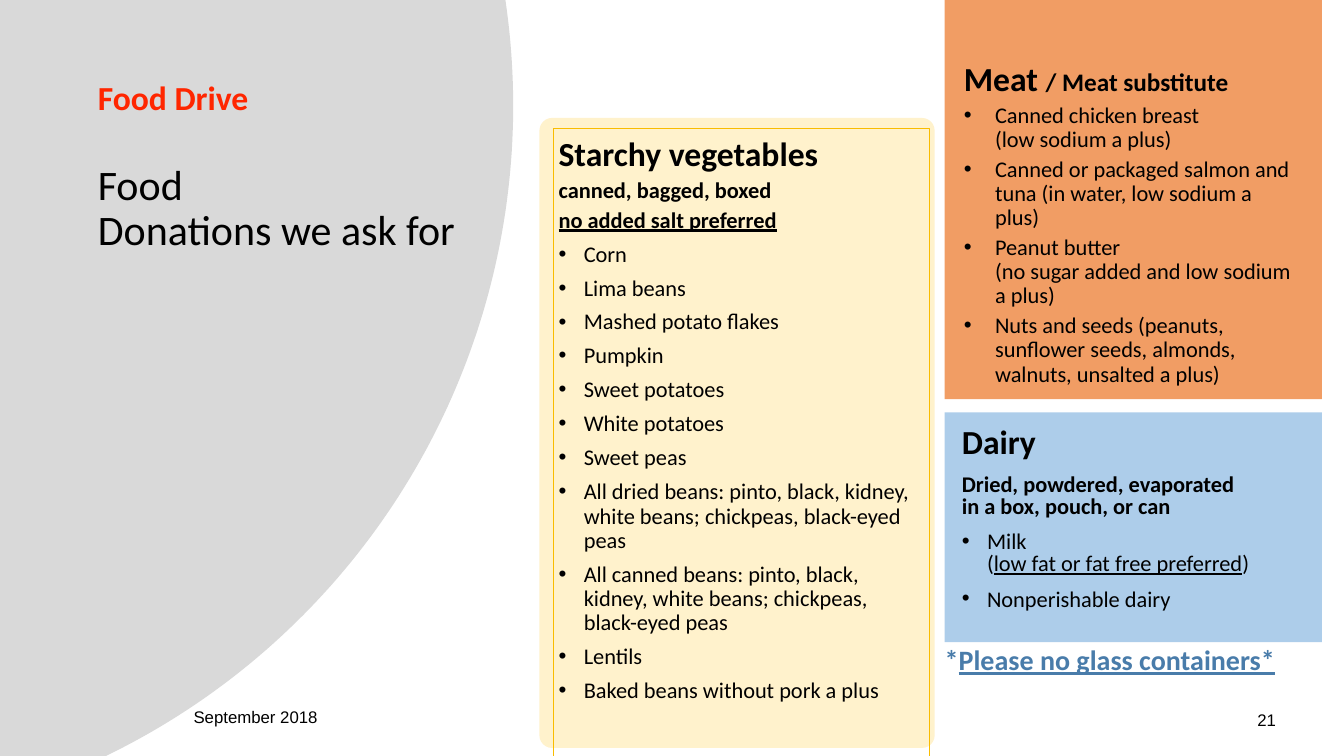
from dataclasses import dataclass
from math import asin, cos, sin

from lxml import etree
from pptx import Presentation
from pptx.dml.color import RGBColor
from pptx.enum.shapes import MSO_SHAPE
from pptx.enum.text import MSO_ANCHOR, MSO_AUTO_SIZE, PP_ALIGN
from pptx.oxml.ns import qn
from pptx.util import Inches, Pt

RECT, ROUNDED = MSO_SHAPE.RECTANGLE, MSO_SHAPE.ROUNDED_RECTANGLE
TOP, MIDDLE = MSO_ANCHOR.TOP, MSO_ANCHOR.MIDDLE
LEFT = PP_ALIGN.LEFT
NO_FIT, GROW = MSO_AUTO_SIZE.NONE, MSO_AUTO_SIZE.SHAPE_TO_FIT_TEXT

COLORS = {
    "black": "000000", "red": "FF2600", "blue": "497CAA", "gray": "D9D9D9",
    "cream": "FFF2CC", "sky": "ADCDEA", "orange": "F19D64", "gold": "F9BC00",
}
WIDTH, HEIGHT = 13.33, 7.5


@dataclass
class Run:
    text: str
    size: float = 16
    bold: bool = False
    underline: bool = False
    color: str = "black"
    font: str = "Calibri"


@dataclass
class Para:
    runs: list[Run]
    before: float = 0
    line: float = 0.9
    indent: float = 0


@dataclass
class Panel:
    box: tuple[float, float, float, float]
    color: str
    shape: MSO_SHAPE = RECT


PANELS = [
    Panel((5.35, 1.17, 3.92, 6.25), "cream", ROUNDED),
    Panel((9.37, 4.09, 3.74, 2.28), "sky"),
    Panel((9.37, -0.1, 3.74, 4.06), "orange"),
]


def bullets(items: list[str], before: float, indent: float) -> list[Para]:
    return [Para([Run(item)], before, indent=indent) for item in items]


TITLE = [
    Para([Run("Food Drive", 24, True, color="red")]),
    Para([Run("Food\nDonations we ask for", 30)], before=33),
]
STARCHY = [
    Para([Run("Starchy vegetables", 24, True)], 10, 1),
    Para([Run("canned, bagged, boxed", bold=True)], 4),
    Para([Run("no added salt preferred", bold=True, underline=True)], 4),
    *bullets([
        "Corn", "Lima beans", "Mashed potato flakes", "Pumpkin",
        "Sweet potatoes", "White potatoes", "Sweet peas",
        "All dried beans: pinto, black, kidney, white beans; chickpeas, black-eyed peas",
        "All canned beans: pinto, black, kidney, white beans; chickpeas, black-eyed peas",
        "Lentils", "Baked beans without pork a plus",
    ], 7, 0.25),
]
MEAT = [
    Para([Run("Meat ", 24, True), Run("/ Meat substitute", 18, True)], 10, 1.2),
    *bullets([
        "Canned chicken breast \n(low sodium a plus)",
        "Canned or packaged salmon and tuna (in water, low sodium a plus)",
        "Peanut butter \n(no sugar added and low sodium a plus)",
        "Nuts and seeds (peanuts, sunflower seeds, almonds, walnuts, unsalted a plus)",
    ], 4, 0.31),
]
DAIRY = [
    Para([Run("Dairy", 24, True)], 10, 0.81),
    Para([Run("Dried, powdered, evaporated \nin a box, pouch, or can", bold=True)], 10, 0.81),
    Para([Run("Milk \n("), Run("low fat or fat free preferred", underline=True), Run(")")],
         10, 0.81, 0.25),
    Para([Run("Nonperishable dairy")], 10, 0.81, 0.25),
]
GLASS = [Para([
    Run("*", 20, True, color="blue"),
    Run("Please no glass containers*", 20, True, True, "blue"),
], 10, 0.81)]
DATE = [Para([Run("September 2018", 12, font="Arial")], line=1)]
NUMBER = [Para([Run("21", 12, font="Arial")], line=1)]


def rgb(name: str) -> RGBColor:
    return RGBColor.from_string(COLORS[name])


def paint(sp, color: str) -> None:
    sp.shadow.inherit = False
    sp.fill.solid()
    sp.fill.fore_color.rgb = rgb(color)
    sp.line.fill.background()


def add_text(p, text: str, *, size: float, bold: bool, underline: bool,
             color: str, font: str) -> None:
    for i, part in enumerate(text.split("\n")):
        if i:
            p.add_line_break()
        if part:
            r = p.add_run()
            r.text = part
            r.font.size = Pt(size)
            r.font.bold = bold
            r.font.underline = underline
            r.font.name = font
            r.font.color.rgb = rgb(color)


def set_bullet(p, indent: float) -> None:
    pPr = p._p.get_or_add_pPr()
    pPr.set("marL", str(Inches(indent)))
    pPr.set("indent", str(-Inches(indent)))
    if indent:
        etree.SubElement(pPr, qn("a:buFont"), typeface="Arial")
        etree.SubElement(pPr, qn("a:buChar"), char="•")
    else:
        etree.SubElement(pPr, qn("a:buNone"))


def fill_text(sp, paras: list[Para], anchor=TOP, wrap: bool = True, fit=NO_FIT) -> None:
    tf = sp.text_frame
    tf.word_wrap, tf.auto_size, tf.vertical_anchor = wrap, fit, anchor
    tf.margin_left = tf.margin_right = tf.margin_top = tf.margin_bottom = Inches(0.05)
    for i, para in enumerate(paras):
        p = tf.add_paragraph() if i else tf.paragraphs[0]
        p.alignment = LEFT
        p.line_spacing = para.line
        p.space_before, p.space_after = Pt(para.before), Pt(0)
        set_bullet(p, para.indent)
        for run in para.runs:
            add_text(p, run.text, size=run.size, bold=run.bold,
                     underline=run.underline, color=run.color, font=run.font)


def place(sp, box: tuple[float, float, float, float]) -> None:
    sp.left, sp.top, sp.width, sp.height = map(Inches, box)
    sp.element.getparent().append(sp.element)


def add_disc(s, cx: float, cy: float, radius: float, left: float, steps: int = 90) -> None:
    start, end = asin(-cy / radius), asin((HEIGHT - cy) / radius)
    angles = [start + (end - start) * i / steps for i in range(steps + 1)]
    arc = [(Inches(cx + radius * cos(a)), Inches(cy + radius * sin(a))) for a in angles]
    builder = s.shapes.build_freeform(Inches(left), 0)
    builder.add_line_segments(arc + [(Inches(left), Inches(HEIGHT))], close=True)
    paint(builder.convert_to_shape(), "gray")


def main() -> None:
    prs = Presentation()
    prs.slide_width, prs.slide_height = Inches(WIDTH), Inches(HEIGHT)
    s = prs.slides.add_slide(prs.slide_layouts[1])
    title, body = s.placeholders

    for panel in PANELS:
        sp = s.shapes.add_shape(panel.shape, *map(Inches, panel.box))
        if panel.shape == ROUNDED:
            sp.adjustments[0] = 0.032
        paint(sp, panel.color)
    add_disc(s, cx=-2.08, cy=1.05, radius=7.17, left=-0.15)

    place(title, (0.92, 0.76, 4.3, 4.76))
    fill_text(title, TITLE)
    place(body, (5.49, 1.27, 3.73, 6.24))
    body.line.color.rgb = rgb("gold")
    body.line.width = Pt(0.75)
    fill_text(body, STARCHY)

    for box, paras, anchor, wrap, fit in [
        ((12.42, 7, 0.3, 0.29), NUMBER, MIDDLE, False, GROW),
        ((1.87, 6.96, 1.83, 0.29), DATE, TOP, True, GROW),
        ((9.51, 0.45, 3.36, 3.9), MEAT, TOP, True, NO_FIT),
        ((9.49, 4.2, 3.5, 1.95), DAIRY, TOP, True, GROW),
        ((9.32, 6.39, 3.73, 0.42), GLASS, TOP, False, GROW),
    ]:
        fill_text(s.shapes.add_textbox(*map(Inches, box)), paras, anchor, wrap, fit)

    prs.save("out.pptx")


if __name__ == "__main__":
    main()
